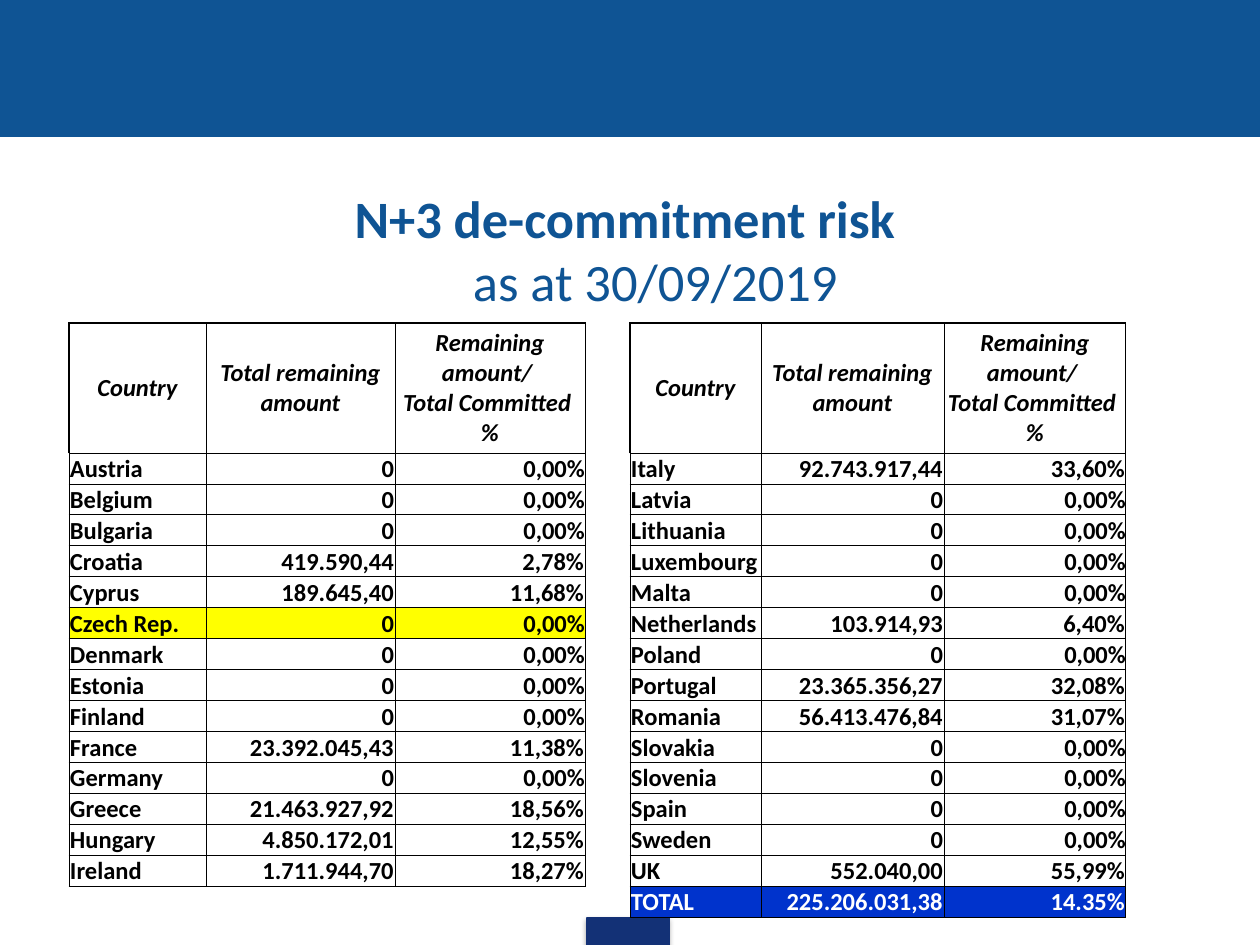
import pptx
import pptx.util
import pptx.dml.color
import pptx.enum.shapes
import pptx.enum.text
import pptx.oxml
import pptx.oxml.ns

PX = 914400 // 126
RGBColor = pptx.dml.color.RGBColor
ALIGN = pptx.enum.text.PP_ALIGN
ANCHOR = pptx.enum.text.MSO_ANCHOR
NS = pptx.oxml.ns.nsdecls("a")

BLUE = RGBColor(0x0F, 0x54, 0x94)
NAVY = RGBColor(0x13, 0x31, 0x76)
YELLOW = RGBColor(0xFF, 0xFF, 0x00)
TOTAL_BLUE = RGBColor(0x00, 0x33, 0xCC)
BLACK = RGBColor(0, 0, 0)
WHITE = RGBColor(0xFF, 0xFF, 0xFF)

HEADER = ("Country", "Total remaining amount",
          "Remaining amount/ \vTotal Committed \v%")
ROW_FILLS = {"Czech Rep.": YELLOW, "TOTAL": TOTAL_BLUE}
HEADER_HEIGHT, ROW_HEIGHT = 130, 31

LEFT_ROWS = [
    ("Austria", "0", "0,00%"),
    ("Belgium", "0", "0,00%"),
    ("Bulgaria", "0", "0,00%"),
    ("Croatia", "419.590,44", "2,78%"),
    ("Cyprus", "189.645,40", "11,68%"),
    ("Czech Rep.", "0", "0,00%"),
    ("Denmark", "0", "0,00%"),
    ("Estonia", "0", "0,00%"),
    ("Finland", "0", "0,00%"),
    ("France", "23.392.045,43", "11,38%"),
    ("Germany", "0", "0,00%"),
    ("Greece", "21.463.927,92", "18,56%"),
    ("Hungary", "4.850.172,01", "12,55%"),
    ("Ireland", "1.711.944,70", "18,27%"),
]
RIGHT_ROWS = [
    ("Italy", "92.743.917,44", "33,60%"),
    ("Latvia", "0", "0,00%"),
    ("Lithuania", "0", "0,00%"),
    ("Luxembourg", "0", "0,00%"),
    ("Malta", "0", "0,00%"),
    ("Netherlands", "103.914,93", "6,40%"),
    ("Poland", "0", "0,00%"),
    ("Portugal", "23.365.356,27", "32,08%"),
    ("Romania", "56.413.476,84", "31,07%"),
    ("Slovakia", "0", "0,00%"),
    ("Slovenia", "0", "0,00%"),
    ("Spain", "0", "0,00%"),
    ("Sweden", "0", "0,00%"),
    ("UK", "552.040,00", "55,99%"),
    ("TOTAL", "225.206.031,38", "14.35%"),
]


def add_runs(p, text, size, color, bold, italic=False):
    """Add one run per line of text, with line breaks between them."""
    for i, line in enumerate(text.split("\v")):
        if i:
            p.add_line_break()
        r = p.add_run()
        r.text = line
        r.font.name = "Calibri"
        r.font.size = pptx.util.Pt(size)
        r.font.color.rgb = color
        r.font.bold = bold
        r.font.italic = italic


def set_borders(cell, widths):
    """Draw black borders; widths maps L, R, T and B to points."""
    tc_pr = cell._tc.get_or_add_tcPr()
    for side, width in widths.items():
        tc_pr.append(pptx.oxml.parse_xml(
            f'<a:ln{side} {NS} w="{pptx.util.Pt(width)}"><a:solidFill>'
            f'<a:srgbClr val="{BLACK}"/></a:solidFill></a:ln{side}>'))


prs = pptx.Presentation()
prs.slide_width = pptx.util.Inches(10)
prs.slide_height = pptx.util.Inches(7.5)
s = prs.slides.add_slide(prs.slide_layouts[5])

# Header band and footer tab
for box, color in (((0, 0, 1260, 136), BLUE), ((587, 918, 82, 28), NAVY)):
    sp = s.shapes.add_shape(pptx.enum.shapes.MSO_SHAPE.RECTANGLE,
                            *(v * PX for v in box))
    sp.shadow.inherit = False
    sp.fill.solid()
    sp.fill.fore_color.rgb = color
    sp.line.color.rgb = color
    sp.line.width = pptx.util.Pt(0.75)
footer_effects = sp._element.spPr.find(pptx.oxml.ns.qn("a:effectLst"))
footer_effects.append(pptx.oxml.parse_xml(
    f'<a:outerShdw {NS} blurRad="{pptx.util.Pt(3.1)}" dist="{pptx.util.Pt(1.8)}" '
    'dir="5400000" rotWithShape="0"><a:srgbClr val="000000">'
    '<a:alpha val="35000"/></a:srgbClr></a:outerShdw>'))

# Title
title = s.shapes.title
title.left, title.top, title.width, title.height = (
    v * PX for v in (64, 185, 1134, 129))
tf = title.text_frame
tf.word_wrap = True
tf.auto_size = pptx.enum.text.MSO_AUTO_SIZE.NONE
tf.vertical_anchor = ANCHOR.MIDDLE
p = tf.paragraphs[0]
p.alignment = ALIGN.CENTER
p_pr = p._p.get_or_add_pPr()
p_pr.set("marL", str(49 * PX))
p_pr.set("indent", str(-49 * PX))
add_runs(p, "N+3 de-commitment risk ", 30, BLUE, True)
p.add_line_break()
add_runs(p, "as at 30/09/2019", 30, BLUE, False)

# Country tables
for left, col_widths, rows in ((69, (137, 189, 190), LEFT_ROWS),
                               (630, (131, 183, 182), RIGHT_ROWS)):
    height = HEADER_HEIGHT + ROW_HEIGHT * len(rows)
    table = s.shapes.add_table(len(rows) + 1, 3, left * PX, 323 * PX,
                               sum(col_widths) * PX, height * PX).table
    table.first_row = table.horz_banding = False
    for col, width in zip(table.columns, col_widths):
        col.width = width * PX
    for i, values in enumerate([HEADER] + rows):
        is_header = i == 0
        table.rows[i].height = (HEADER_HEIGHT if is_header else ROW_HEIGHT) * PX
        fill = ROW_FILLS.get(values[0])
        is_total = fill == TOTAL_BLUE
        for j, text in enumerate(values):
            cell = table.cell(i, j)
            inset = 0 if is_header or text == "0,00%" else PX
            cell.margin_left = cell.margin_right = cell.margin_top = inset
            cell.margin_bottom = 0
            middle = is_header or (is_total and j > 0)
            cell.vertical_anchor = ANCHOR.MIDDLE if middle else ANCHOR.BOTTOM
            set_borders(cell, {"L": 1 if is_header and j == 0 else 0.5, "R": 0.5,
                               "T": 1 if is_header else 0.5, "B": 0.5})
            if fill:
                cell.fill.solid()
                cell.fill.fore_color.rgb = fill
            else:
                cell.fill.background()
            p = cell.text_frame.paragraphs[0]
            if is_header:
                p.alignment = ALIGN.CENTER
            else:
                p.alignment = ALIGN.RIGHT if j else ALIGN.LEFT
            add_runs(p, text, 14, WHITE if is_total else BLACK, True, is_header)

prs.save("out.pptx")
